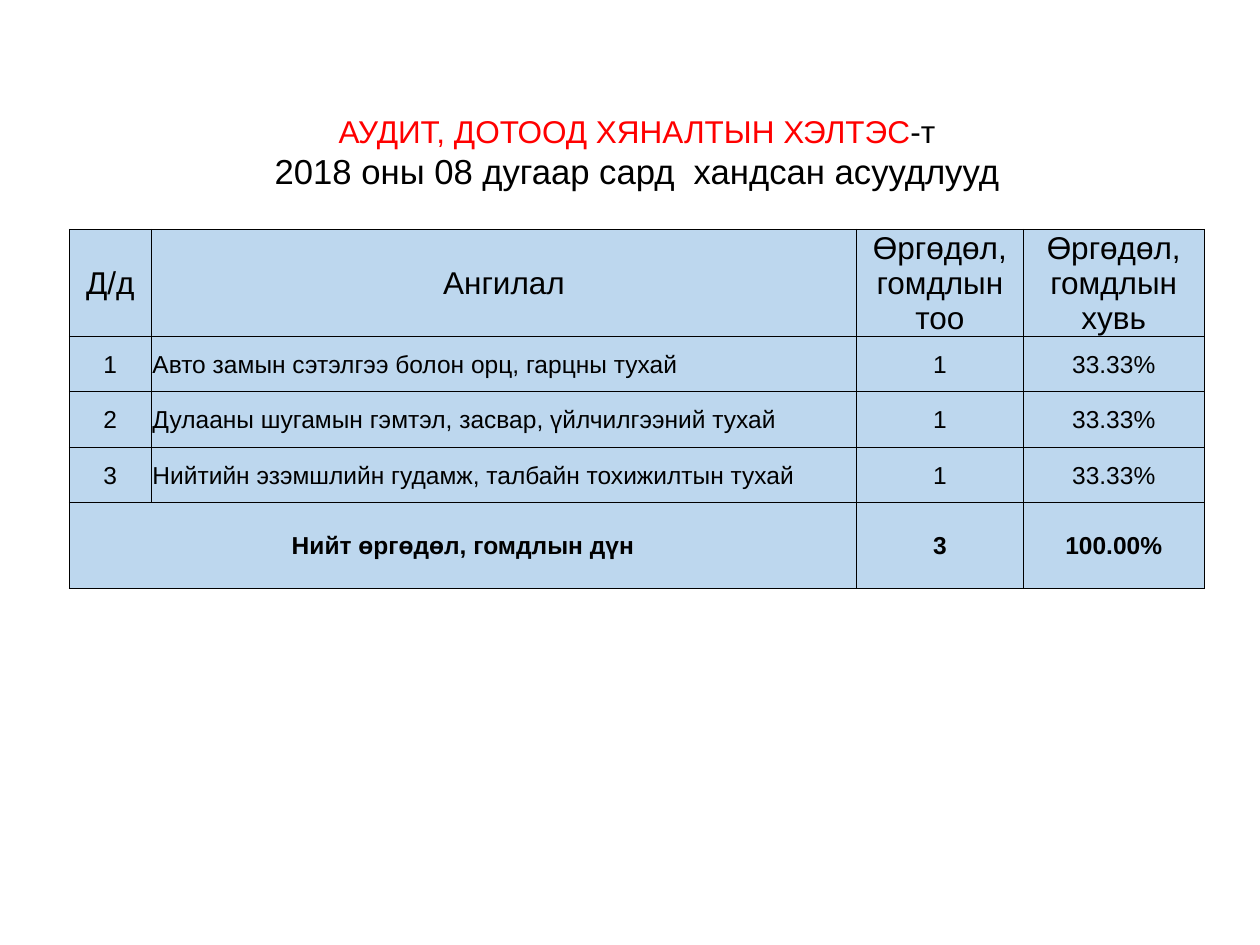
from lxml import etree
from pptx import Presentation
from pptx.dml.color import RGBColor
from pptx.enum.text import MSO_ANCHOR, MSO_AUTO_SIZE, PP_ALIGN
from pptx.oxml.ns import qn
from pptx.util import Inches, Pt

CENTER, LEFT = PP_ALIGN.CENTER, PP_ALIGN.LEFT
MIDDLE = MSO_ANCHOR.MIDDLE
BLACK = RGBColor(0, 0, 0)
RED = RGBColor(0xFF, 0, 0)
PALE_BLUE = RGBColor(0xBD, 0xD7, 0xEE)
FONT = "Arial"
TITLE_ONLY = 5

# Each title line: (text, size, colour) runs
TITLE_LINES = [
    [("АУДИТ, ДОТООД ХЯНАЛТЫН ХЭЛТЭС", 18, RED), ("-т", 18, BLACK)],
    [("2018 оны 08 дугаар сард  хандсан асуудлууд", 19.8, BLACK)],
]
HEADER = ["Д/д", "Ангилал", "Өргөдөл, гомдлын тоо", "Өргөдөл, гомдлын хувь"]
REQUESTS = [
    ("Авто замын сэтэлгээ болон орц, гарцны тухай", "1", "33.33%"),
    ("Дулааны шугамын гэмтэл, засвар, үйлчилгээний тухай", "1", "33.33%"),
    ("Нийтийн эзэмшлийн гудамж, талбайн тохижилтын тухай", "1", "33.33%"),
]
TOTAL = ["Нийт өргөдөл, гомдлын дүн", "", "3", "100.00%"]
COLUMN_WIDTHS = [0.65, 5.6, 1.32, 1.44]
HEADER_HEIGHT, REQUEST_HEIGHT, TOTAL_HEIGHT = 0.85, 0.44, 0.68


def style_run(run, size, color=BLACK, bold=False):
    run.font.name = FONT
    run.font.size = Pt(size)
    run.font.bold = bold
    run.font.color.rgb = color


def add_borders(cell):
    properties = cell._tc.get_or_add_tcPr()
    for position, side in enumerate(("lnL", "lnR", "lnT", "lnB")):
        line = etree.Element(qn(f"a:{side}"), w=str(Pt(0.5)))
        fill = etree.SubElement(line, qn("a:solidFill"))
        etree.SubElement(fill, qn("a:srgbClr"), val=str(BLACK))
        properties.insert(position, line)


def fill_cell(cell, text, size, alignment, bold):
    cell.fill.solid()
    cell.fill.fore_color.rgb = PALE_BLUE
    cell.vertical_anchor = MIDDLE
    cell.margin_left = cell.margin_right = cell.margin_top = Inches(0.01)
    cell.margin_bottom = 0
    add_borders(cell)
    cell.text_frame.text = text
    paragraph = cell.text_frame.paragraphs[0]
    paragraph.alignment = alignment
    for run in paragraph.runs:
        style_run(run, size, bold=bold)


def add_title(slide):
    title = slide.shapes.title
    title.left, title.top = Inches(0.57), Inches(0.88)
    title.width, title.height = Inches(8.97), Inches(0.65)
    frame = title.text_frame
    frame.auto_size = MSO_AUTO_SIZE.NONE
    frame.word_wrap = True
    frame.vertical_anchor = MIDDLE
    frame.text = "\n".join("" for _ in TITLE_LINES)
    for paragraph, runs in zip(frame.paragraphs, TITLE_LINES):
        paragraph.alignment = CENTER
        for text, size, color in runs:
            run = paragraph.add_run()
            run.text = text
            style_run(run, size, color)


def add_request_table(slide):
    numbered = [(str(number), *request) for number, request in enumerate(REQUESTS, 1)]
    rows = [HEADER, *numbered, TOTAL]
    heights = [HEADER_HEIGHT, *[REQUEST_HEIGHT] * len(REQUESTS), TOTAL_HEIGHT]
    last = len(rows) - 1
    table = slide.shapes.add_table(
        len(rows), len(HEADER), Inches(0.55), Inches(1.82),
        Inches(sum(COLUMN_WIDTHS)), Inches(sum(heights))).table
    for column, width in zip(table.columns, COLUMN_WIDTHS):
        column.width = Inches(width)
    for row, height in zip(table.rows, heights):
        row.height = Inches(height)
    for row_index, row in enumerate(rows):
        for column_index, text in enumerate(row):
            is_category = column_index == 1 and 0 < row_index < last
            fill_cell(table.cell(row_index, column_index), text,
                      size=18 if row_index == 0 else 14,
                      alignment=LEFT if is_category else CENTER,
                      bold=row_index == last)
    table.cell(last, 0).merge(table.cell(last, 1))


def main():
    presentation = Presentation()
    presentation.slide_width, presentation.slide_height = Inches(10), Inches(7.5)
    slide = presentation.slides.add_slide(presentation.slide_layouts[TITLE_ONLY])
    add_title(slide)
    add_request_table(slide)
    presentation.save("out.pptx")


if __name__ == "__main__":
    main()
